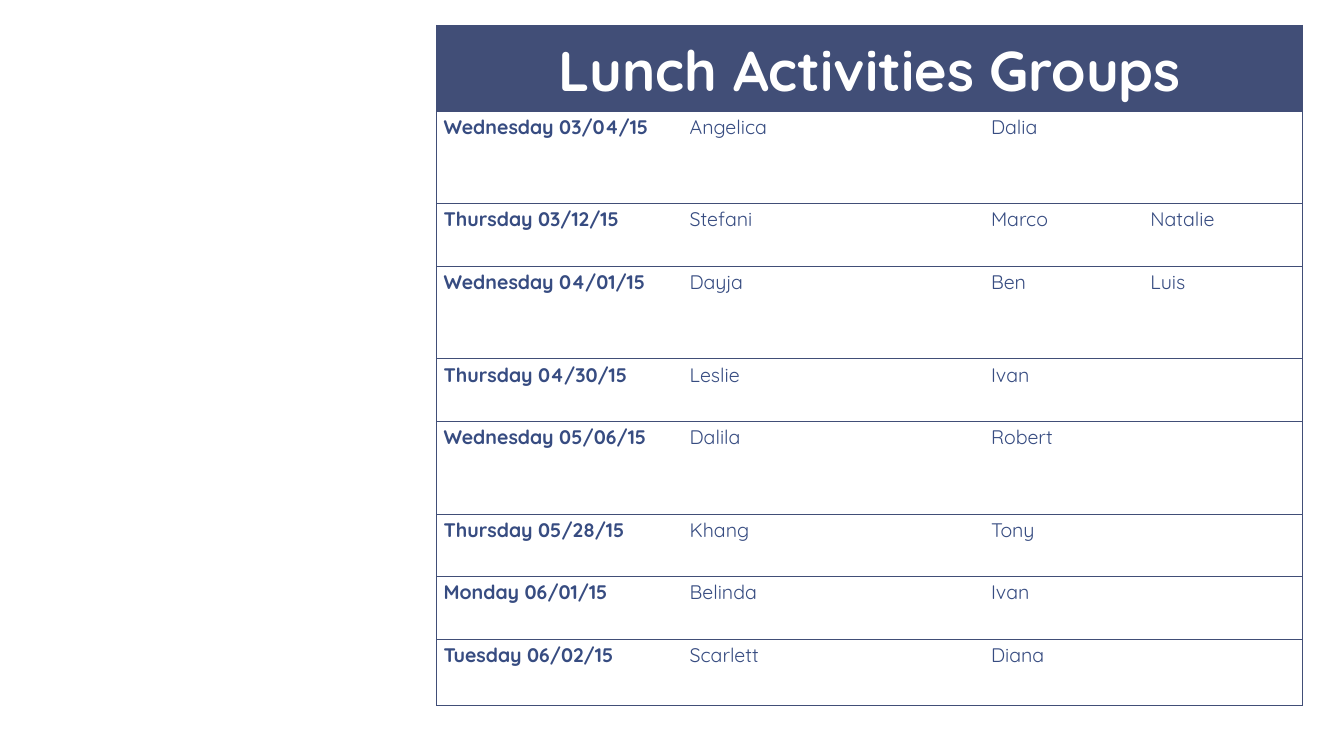
"""Build the lunch activities groups slide."""
from lxml import etree
from pptx import Presentation
from pptx.dml.color import RGBColor
from pptx.enum import text
from pptx.oxml import ns
from pptx.util import Inches, Pt

COLORS = {"navy": "414E77", "ink": "374C81", "white": "FFFFFF"}
COLUMN_WIDTHS = [2.44, 2.99, 1.58, 1.58]
ROW_HEIGHTS = [0.85, 0.92, 0.62, 0.92, 0.62, 0.92, 0.62, 0.62, 0.66]
ROWS = [
    ["Lunch Activities Groups"],
    ["Wednesday 03/04/15", "Angelica", "Dalia"],
    ["Thursday 03/12/15", "Stefani", "Marco", "Natalie"],
    ["Wednesday 04/01/15", "Dayja", "Ben", "Luis"],
    ["Thursday 04/30/15", "Leslie", "Ivan"],
    ["Wednesday 05/06/15", "Dalila", "Robert"],
    ["Thursday 05/28/15", "Khang", "Tony"],
    ["Monday 06/01/15", "Belinda", "Ivan"],
    ["Tuesday 06/02/15", "Scarlett", "Diana"],
]


def set_borders(cell, ruled_sides):
    """Rule the named sides of a cell and clear the others."""
    properties = cell._tc.get_or_add_tcPr()
    for side in "LRTB":
        line = etree.SubElement(properties, ns.qn(f"a:ln{side}"), w=str(Pt(0.5)))
        if side in ruled_sides:
            fill = etree.SubElement(line, ns.qn("a:solidFill"))
            etree.SubElement(fill, ns.qn("a:srgbClr"), val=COLORS["navy"])
        else:
            etree.SubElement(line, ns.qn("a:noFill"))


deck = Presentation()
deck.slide_width, deck.slide_height = Inches(13.33), Inches(7.5)
page = deck.slides.add_slide(deck.slide_layouts[6])

table = page.shapes.add_table(
    len(ROWS), len(COLUMN_WIDTHS), Inches(4.33), Inches(0.25), Inches(8.58), Inches(6.75)
).table
table.first_row = table.horz_banding = False
for column, width in zip(table.columns, COLUMN_WIDTHS):
    column.width = Inches(width)
for row, height in zip(table.rows, ROW_HEIGHTS):
    row.height = Inches(height)

last_column = len(COLUMN_WIDTHS) - 1
for row_index, entries in enumerate(ROWS):
    is_header = row_index == 0
    last_entry = len(entries) - 1
    if last_entry < last_column:
        table.cell(row_index, last_entry).merge(table.cell(row_index, last_column))

    for column_index in range(len(COLUMN_WIDTHS)):
        cell = table.cell(row_index, column_index)
        sides = "TB"
        if column_index == 0:
            sides += "L"
        if column_index in (last_entry, last_column):
            sides += "R"
        set_borders(cell, sides)
        cell.fill.solid()
        cell.fill.fore_color.rgb = RGBColor.from_string(COLORS["navy" if is_header else "white"])
        cell.margin_left = cell.margin_right = Inches(0.07)
        cell.margin_top = cell.margin_bottom = 0

    for column_index, entry in enumerate(entries):
        cell = table.cell(row_index, column_index)
        cell.text_frame.text = entry
        para = cell.text_frame.paragraphs[0]
        para.line_spacing = 1.15
        para.alignment = text.PP_ALIGN.CENTER if is_header else text.PP_ALIGN.LEFT
        font = para.runs[0].font
        font.name = "Quicksand"
        font.size = Pt(40 if is_header else 14)
        font.bold = column_index == 0
        font.color.rgb = RGBColor.from_string(COLORS["white" if is_header else "ink"])

deck.save("out.pptx")
